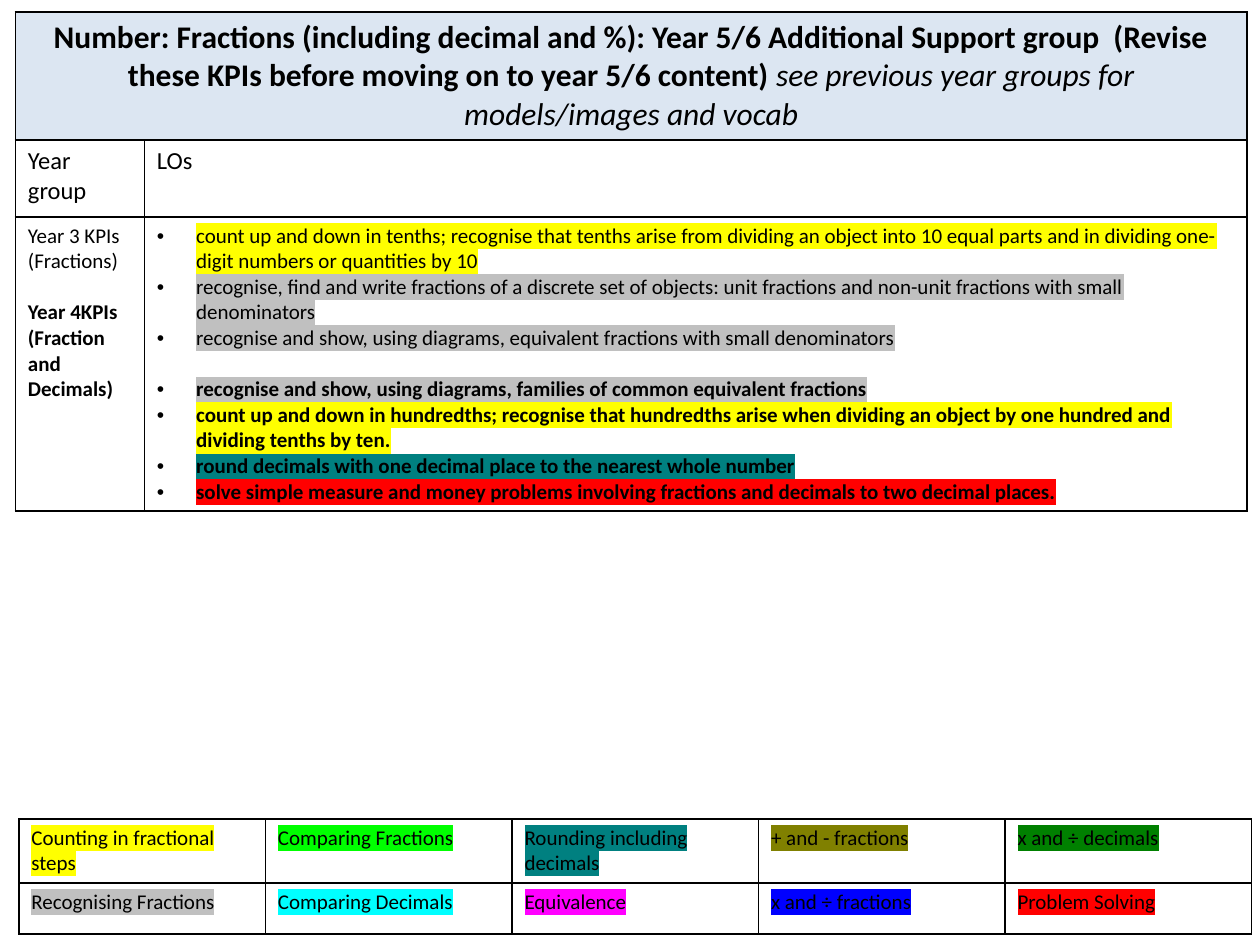
from lxml.etree import SubElement
from pptx import Presentation
from pptx.dml.color import RGBColor
from pptx.enum.text import PP_ALIGN
from pptx.oxml.ns import qn
from pptx.util import Cm, Pt

FONT = "Calibri"
COLOURS = {
    "black": "000000", "pale blue": "DCE6F2", "yellow": "FFFF00", "grey": "C0C0C0",
    "teal": "008080", "red": "FF0000", "lime": "00FF00", "olive": "808000",
    "green": "008000", "cyan": "00FFFF", "magenta": "FF00FF", "blue": "0000FF",
}

# Content
TITLE = [
    ("Number: Fractions (including decimal and %): Year 5/6 Additional Support group  "
     "(Revise these KPIs before moving on to year 5/6 content) ", {"bold": True}),
    ("see previous year groups for models/images and vocab", {"italic": True}),
]
HEADINGS = ["Year group", "LOs"]
YEARS = [  # label, bold, objectives with highlight
    ("Year 3 KPIs (Fractions)", False, [
        ("count up and down in tenths; recognise that tenths arise from dividing an object into "
         "10 equal parts and in dividing one-digit numbers or quantities by 10", "yellow"),
        ("recognise, find and write fractions of a discrete set of objects: unit fractions and "
         "non-unit fractions with small denominators", "grey"),
        ("recognise and show, using diagrams, equivalent fractions with small denominators", "grey"),
    ]),
    ("Year 4KPIs (Fraction and Decimals)", True, [
        ("recognise and show, using diagrams, families of common equivalent fractions", "grey"),
        ("count up and down in hundredths; recognise that hundredths arise when dividing an object "
         "by one hundred and dividing tenths by ten.", "yellow"),
        ("round decimals with one decimal place to the nearest whole number", "teal"),
        ("solve simple measure and money problems involving fractions and decimals to two decimal "
         "places.", "red"),
    ]),
]
KEY = [
    [("Counting in fractional steps", "yellow"), ("Comparing Fractions", "lime"),
     ("Rounding including decimals", "teal"), ("+ and - fractions", "olive"),
     ("x and ÷ decimals", "green")],
    [("Recognising Fractions", "grey"), ("Comparing Decimals", "cyan"),
     ("Equivalence", "magenta"), ("x and ÷ fractions", "blue"), ("Problem Solving", "red")],
]
YEAR_GAP = Pt(14.65)  # one line of 12 pt text


def add_span(para, text, size, highlight=None, bold=False, italic=False):
    span = para.add_run()
    span.text = text
    font = span.font
    font.name, font.size, font.bold, font.italic = FONT, Pt(size), bold, italic
    font.color.rgb = RGBColor.from_string(COLOURS["black"])
    if highlight:
        props = span._r.get_or_add_rPr()
        mark = SubElement(props, qn("a:highlight"))
        SubElement(mark, qn("a:srgbClr"), val=COLOURS[highlight])
        props.find(qn("a:solidFill")).addnext(mark)


def next_para(cell, first):
    return cell.text_frame.paragraphs[0] if first else cell.text_frame.add_paragraph()


def add_bullet(para):
    props = para._p.get_or_add_pPr()
    props.set("marL", str(Cm(0.79)))
    props.set("indent", str(-Cm(0.79)))
    SubElement(props, qn("a:buFont"), typeface="Arial")
    SubElement(props, qn("a:buChar"), char="•")


def add_grid(page, left, top, widths, heights):
    """Add a plain table with thin black borders."""
    grid = page.shapes.add_table(len(heights), len(widths), Cm(left), Cm(top),
                                 Cm(sum(widths)), Cm(sum(heights))).table
    grid.first_row = grid.horz_banding = False
    for column, width in zip(grid.columns, widths):
        column.width = Cm(width)
    for row, height in zip(grid.rows, heights):
        row.height = Cm(height)
    for cell in grid.iter_cells():
        props = cell._tc.get_or_add_tcPr()
        for side in ("lnL", "lnR", "lnT", "lnB"):
            line = SubElement(props, qn(f"a:{side}"), w=str(Pt(1)))
            ink = SubElement(line, qn("a:solidFill"))
            SubElement(ink, qn("a:srgbClr"), val=COLOURS["black"])
        cell.fill.background()
    return grid


def main():
    deck = Presentation()
    deck.slide_width, deck.slide_height = Cm(25.4), Cm(19.05)
    page = deck.slides.add_slide(deck.slide_layouts[6])

    # Objectives table: title row
    grid = add_grid(page, 0.31, 0.24, [2.6, 22.23], [2.57, 1.55, 5.92])
    title = grid.cell(0, 0)
    title.merge(grid.cell(0, 1))
    title.fill.solid()
    title.fill.fore_color.rgb = RGBColor.from_string(COLOURS["pale blue"])
    para = next_para(title, True)
    para.alignment = PP_ALIGN.CENTER
    for text, style in TITLE:
        add_span(para, text, 18, **style)

    # Headings
    for column, heading in enumerate(HEADINGS):
        add_span(next_para(grid.cell(1, column), True), heading, 14)

    # Year labels and their objectives
    label_cell, objective_cell = grid.cell(2, 0), grid.cell(2, 1)
    for year, (label, bold, objectives) in enumerate(YEARS):
        para = next_para(label_cell, year == 0)
        if year:
            para.space_before = YEAR_GAP
        add_span(para, label, 12, bold=bold)
        for number, (text, colour) in enumerate(objectives):
            para = next_para(objective_cell, year == number == 0)
            if year and number == 0:
                para.space_before = YEAR_GAP
            add_bullet(para)
            add_span(para, text, 12, colour, bold)

    # Colour key
    key = add_grid(page, 0.38, 16.51, [4.97] * 5, [1.29, 1.03])
    for row, entries in enumerate(KEY):
        for column, (text, colour) in enumerate(entries):
            add_span(next_para(key.cell(row, column), True), text, 12, colour)

    deck.save("out.pptx")


if __name__ == "__main__":
    main()
